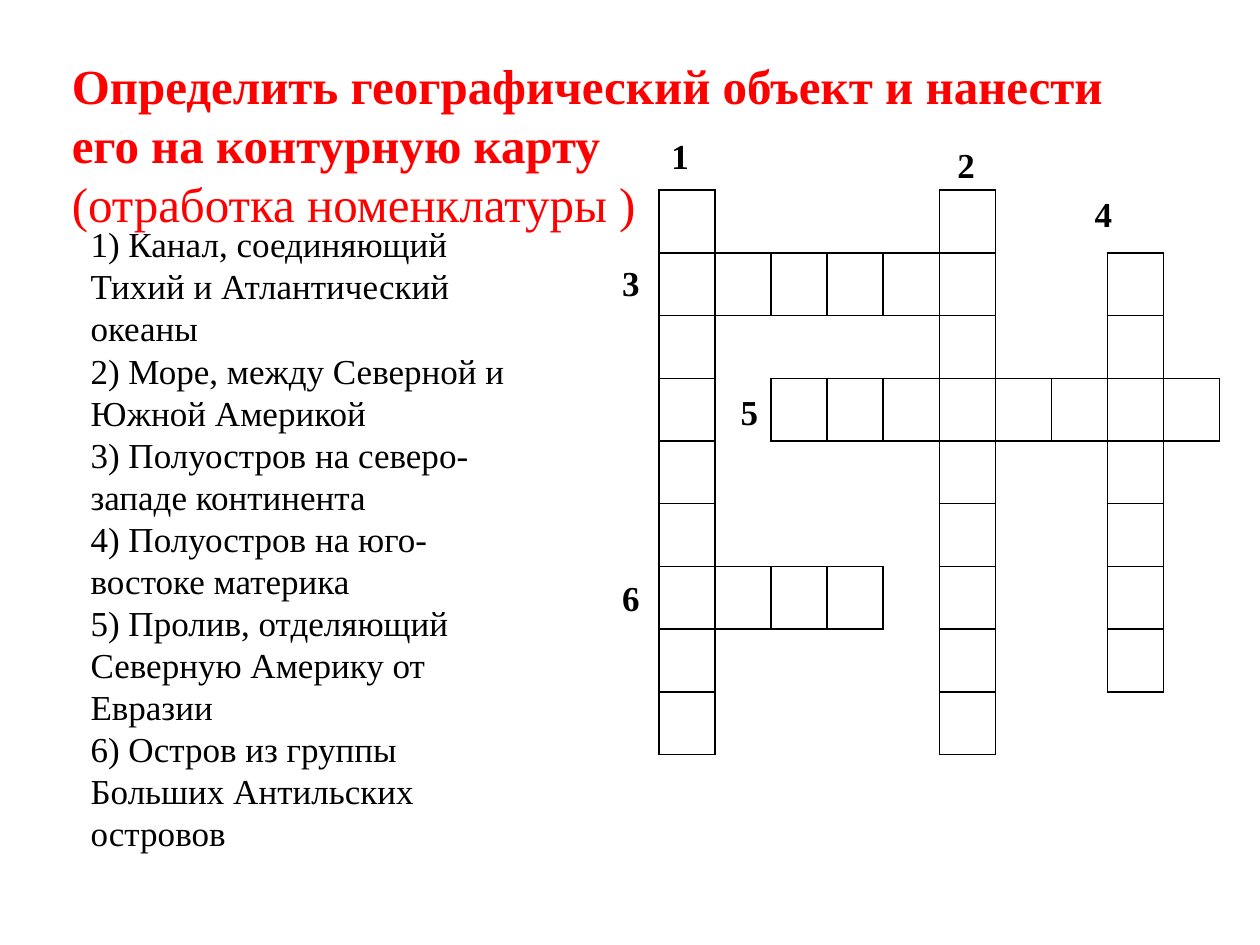
from lxml import etree
from pptx import Presentation
from pptx.dml.color import RGBColor
from pptx.enum.text import MSO_ANCHOR, MSO_AUTO_SIZE, PP_ALIGN
from pptx.oxml.ns import qn
from pptx.util import Inches, Pt

LEFT, TOP, NO_FIT = PP_ALIGN.LEFT, MSO_ANCHOR.TOP, MSO_AUTO_SIZE.NONE
TITLE_ONLY = 5
FONT = "Times New Roman"
COLORS = {"title": "FF0000", "text": "000000", "grid": "000000"}

TITLE = [
    "Определить географический объект и нанести его на контурную карту",
    "(отработка номенклатуры )",
]
CLUES = [
    "1) Канал, соединяющий Тихий и Атлантический океаны",
    "2) Море, между Северной и Южной Америкой",
    "3) Полуостров на северо-западе континента",
    "4) Полуостров на юго-востоке материка",
    "5) Пролив, отделяющий Северную Америку от Евразии",
    "6) Остров из группы Больших Антильских островов",
]
ROWS, COLUMNS = 9, 10
# Each word: first row, first column, row step, column step, length
WORDS = [
    (0, 0, 1, 0, 9),
    (0, 5, 1, 0, 9),
    (1, 0, 0, 1, 6),
    (1, 8, 1, 0, 7),
    (3, 2, 0, 1, 8),
    (6, 0, 0, 1, 4),
]
NUMBER_PLACES = [(5.23, 1.02), (7.5, 1.09), (4.84, 2.03),
                 (8.59, 1.48), (5.78, 3.05), (4.84, 4.53)]
# Border tag and the neighbour that shares it
SIDES = {"a:lnL": (0, -1), "a:lnR": (0, 1), "a:lnT": (-1, 0), "a:lnB": (1, 0)}


class CrosswordSlide:
    def __init__(self, presentation):
        self.slide = presentation.slides.add_slide(
            presentation.slide_layouts[TITLE_ONLY])

    def fill_text(self, shape, lines, size, color, bold_lines=0):
        frame = shape.text_frame
        frame.word_wrap = True
        frame.auto_size = NO_FIT
        frame.vertical_anchor = TOP
        frame.text = "\n".join(lines)
        for index, paragraph in enumerate(frame.paragraphs):
            paragraph.alignment = LEFT
            for run in paragraph.runs:
                run.font.name = FONT
                run.font.size = Pt(size)
                run.font.bold = index < bold_lines
                run.font.color.rgb = RGBColor.from_string(COLORS[color])

    def title(self, lines, left, top, width, height):
        heading = self.slide.shapes.title
        heading.left, heading.top = Inches(left), Inches(top)
        heading.width, heading.height = Inches(width), Inches(height)
        self.fill_text(heading, lines, 28, "title", bold_lines=1)

    def text(self, lines, left, top, width, height, bold_lines=0):
        box = self.slide.shapes.add_textbox(
            Inches(left), Inches(top), Inches(width), Inches(height))
        self.fill_text(box, lines, 20, "text", bold_lines)

    def border(self, cell, tag, visible):
        line = etree.SubElement(cell._tc.get_or_add_tcPr(), qn(tag),
                                w=str(Pt(1) if visible else 0))
        if visible:
            fill = etree.SubElement(line, qn("a:solidFill"))
            etree.SubElement(fill, qn("a:srgbClr"), val=COLORS["grid"])
        else:
            etree.SubElement(line, qn("a:noFill"))

    def crossword(self, words, left, top, width, height):
        letters = {(row + down * i, column + across * i)
                   for row, column, down, across, length in words
                   for i in range(length)}
        grid = self.slide.shapes.add_table(
            ROWS, COLUMNS, Inches(left), Inches(top),
            Inches(width), Inches(height)).table
        grid.first_row = grid.horz_banding = False
        for row in range(ROWS):
            for column in range(COLUMNS):
                cell = grid.cell(row, column)
                for tag, (down, across) in SIDES.items():
                    pair = {(row, column), (row + down, column + across)}
                    self.border(cell, tag, bool(pair & letters))
                cell.fill.background()


def main():
    presentation = Presentation()
    presentation.slide_width = Inches(10)
    presentation.slide_height = Inches(7.5)
    page = CrosswordSlide(presentation)

    # Heading
    page.title(TITLE, 0.47, 0.39, 8.98, 1.51)

    # Crossword grid and word numbers
    page.crossword(WORDS, 5.23, 1.51, 4.45, 4.48)
    for number, (left, top) in enumerate(NUMBER_PLACES, start=1):
        page.text([str(number)], left, top, 0.36, 0.44, bold_lines=1)

    # Clues
    page.text(CLUES, 0.62, 1.72, 3.59, 5.45)

    presentation.save("out.pptx")


if __name__ == "__main__":
    main()
